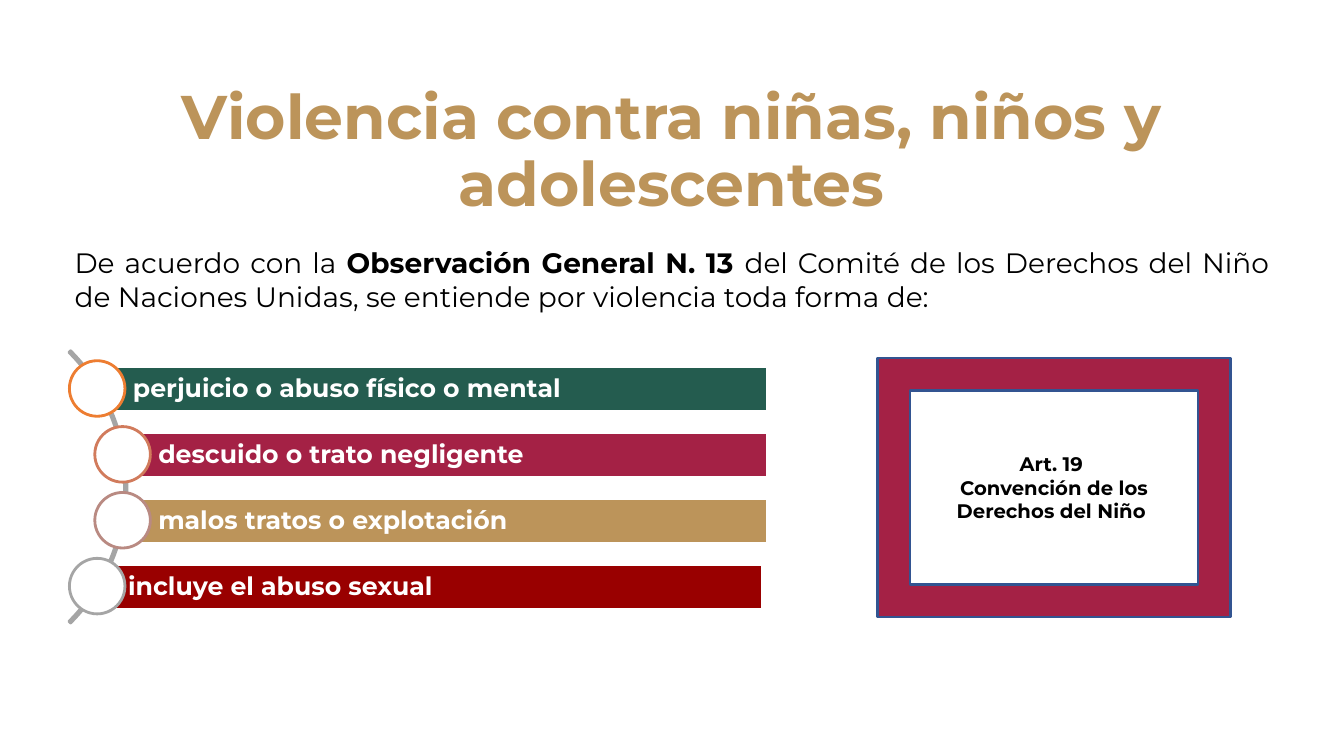
from dataclasses import dataclass

from pptx import Presentation
from pptx.dml.color import RGBColor
from pptx.enum import shapes, text
from pptx.util import Cm, Pt

FONT = "Montserrat"
HUES = {
    "gold": "BC945A", "green": "245C4F", "wine": "A42145", "red": "990000",
    "white": "FFFFFF", "black": "000000", "blue": "325491", "gray": "A5A5A5",
    "orange": "ED7D31", "copper": "D17B5C", "rose": "B98A82",
}
KIND = shapes.MSO_SHAPE
ALIGN = text.PP_ALIGN
MID = text.MSO_ANCHOR.MIDDLE

STEP = 1.66
BAR_TOP, BAR_HIGH = 9.25, 1.12
RING_TOP, RING_SIZE = 9.09, 1.4


@dataclass
class Item:
    label: str
    fill: str
    ring: str
    ring_x: float
    bar_x: float
    wide: float


ITEMS = [
    Item("perjuicio o abuso físico o mental", "green", "orange", 1.75, 2.46, 16.87),
    Item("descuido o trato negligente", "wine", "copper", 2.39, 3.1, 16.23),
    Item("malos tratos o explotación", "gold", "rose", 2.39, 3.1, 16.23),
    Item("incluye el abuso sexual", "red", "gray", 1.75, 2.34, 16.87),
]


def hue(name: str) -> RGBColor:
    return RGBColor.from_string(HUES[name])


def style(para, size: int, color: str, align, bold: bool | None = None) -> None:
    para.alignment = align
    font = para.font
    font.name, font.size, font.bold = FONT, Pt(size), bold
    font.color.rgb = hue(color)


def draw(slide, kind, box: tuple, line: str, fill: str | None = None):
    shape = slide.shapes.add_shape(kind, *map(Cm, box))
    shape.shadow.inherit = False
    if fill:
        shape.fill.solid()
        shape.fill.fore_color.rgb = hue(fill)
    else:
        shape.fill.background()
    shape.line.color.rgb = hue(line)
    shape.line.width = Pt(2)
    return shape


def write(slide, box: tuple):
    """Add a wrapping text box and return its frame."""
    frame = slide.shapes.add_textbox(*map(Cm, box)).text_frame
    frame.word_wrap = True
    return frame


def add_head(slide) -> None:
    frame = write(slide, (2.31, 1.7, 29.24, 3.96))
    frame.vertical_anchor = text.MSO_ANCHOR.BOTTOM
    para = frame.paragraphs[0]
    para.text = "Violencia contra niñas, niños y adolescentes"
    para.line_spacing = 0.9
    style(para, 44, "gold", ALIGN.CENTER, True)


def add_intro(slide) -> None:
    para = write(slide, (1.63, 6.07, 30.61, 1.96)).paragraphs[0]
    style(para, 20, "black", ALIGN.JUSTIFY)
    for part, bold in (
        ("De acuerdo con la ", False),
        ("Observación General N. 13 ", True),
        ("del Comité de los Derechos del Niño de Naciones Unidas, "
         "se entiende por violencia toda forma de:", False),
    ):
        run = para.add_run()
        run.text = part
        run.font.bold = bold


def add_item(slide, item: Item, row: int) -> None:
    shift = row * STEP
    bar = draw(slide, KIND.RECTANGLE,
               (item.bar_x, BAR_TOP + shift, item.wide, BAR_HIGH), "white", item.fill)
    frame = bar.text_frame
    frame.vertical_anchor = MID
    frame.margin_left, frame.margin_right = Cm(0.89), Cm(0.13)
    para = frame.paragraphs[0]
    para.text = item.label
    para.line_spacing = 0.9
    style(para, 18, "white", ALIGN.LEFT, True)
    draw(slide, KIND.OVAL,
         (item.ring_x, RING_TOP + shift, RING_SIZE, RING_SIZE), item.ring, "white")


def add_list(slide) -> None:
    arc = draw(slide, KIND.BLOCK_ARC, (-6.5, 7.42, 9.7, 9.7), "gray")
    for spot, value in enumerate((189, 27, 0.006)):
        arc.adjustments[spot] = value
    for row, item in enumerate(ITEMS):
        add_item(slide, item, row)


def add_frame(slide) -> None:
    shape = draw(slide, KIND.FRAME, (22.12, 9.02, 8.89, 6.53), "blue", "wine")
    frame = shape.text_frame
    frame.word_wrap = True
    frame.vertical_anchor = MID
    frame.text = "Art. 19 \nConvención de los Derechos del Niño "
    for para in frame.paragraphs:
        style(para, 14, "black", ALIGN.CENTER, True)


def main() -> None:
    deck = Presentation()
    deck.slide_width, deck.slide_height = Cm(33.87), Cm(19.05)
    slide = deck.slides.add_slide(deck.slide_layouts[6])
    add_head(slide)
    add_intro(slide)
    add_list(slide)
    add_frame(slide)
    deck.save("out.pptx")


if __name__ == "__main__":
    main()
